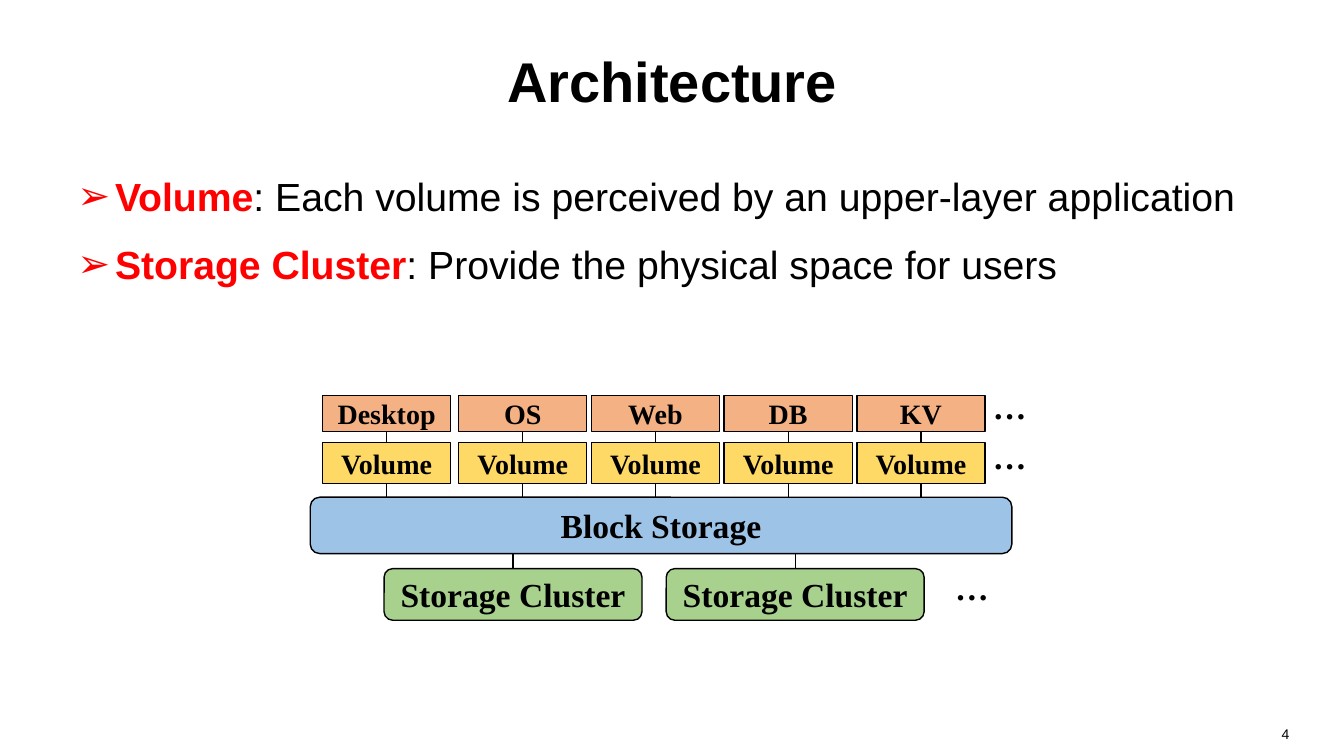
from dataclasses import dataclass

from lxml.etree import SubElement
from pptx import Presentation
from pptx.dml.color import RGBColor as RGB
from pptx.enum.shapes import MSO_CONNECTOR as CONN, MSO_SHAPE as SHAPE
from pptx.enum.text import MSO_ANCHOR as ANCHOR, PP_ALIGN as ALIGN
from pptx.oxml.ns import qn
from pptx.util import Cm, Pt


@dataclass(frozen=True)
class Theme:
    """Colours, fonts and type sizes of the slide."""
    black: RGB = RGB(0, 0, 0)
    red: RGB = RGB(255, 0, 0)
    app: RGB = RGB.from_string("F4B183")
    volume: RGB = RGB.from_string("FFD966")
    block: RGB = RGB.from_string("9DC3E6")
    cluster: RGB = RGB.from_string("A9D18E")
    sans: str = "Arial"
    serif: str = "Times New Roman"
    title: int = 40
    body: int = 28
    large: int = 24
    small: int = 20
    number: int = 10


T = Theme()


def style(r, font, size, bold=False, color=T.black):
    """Format one run."""
    r.font.name, r.font.size, r.font.bold = font, Pt(size), bold
    r.font.color.rgb = color


def add_label(slide, text, x, y, w, h, font, size, bold=False, align=ALIGN.LEFT):
    """Add a one-paragraph text box."""
    tf = slide.shapes.add_textbox(Cm(x), Cm(y), Cm(w), Cm(h)).text_frame
    tf.word_wrap = True
    p = tf.paragraphs[0]
    p.text, p.alignment = text, align
    style(p.runs[0], font, size, bold)


def add_box(slide, kind, text, x, y, w, h, fill, size):
    """Add an outlined box with a centred bold label."""
    sp = slide.shapes.add_shape(kind, Cm(x), Cm(y), Cm(w), Cm(h))
    sp.shadow.inherit = False
    sp.fill.solid()
    sp.fill.fore_color.rgb = fill
    sp.line.color.rgb, sp.line.width = T.black, Pt(1)
    tf = sp.text_frame
    tf.text, tf.vertical_anchor = text, ANCHOR.MIDDLE
    p = tf.paragraphs[0]
    p.alignment = ALIGN.CENTER
    style(p.runs[0], T.serif, size, True)


def add_link(slide, x, top, bottom):
    """Join two layers with a vertical line."""
    line = slide.shapes.add_connector(CONN.STRAIGHT, Cm(x), Cm(top), Cm(x), Cm(bottom))
    line.line.color.rgb, line.line.width = T.black, Pt(1)
    SubElement(line._element.spPr, qn("a:effectLst"))


def add_title(slide, text, x, y, w, h):
    """Place and format the title placeholder."""
    sp = slide.shapes.title
    sp.left, sp.top, sp.width, sp.height = Cm(x), Cm(y), Cm(w), Cm(h)
    tf = sp.text_frame
    tf.text, tf.vertical_anchor = text, ANCHOR.MIDDLE
    p = tf.paragraphs[0]
    p.alignment = ALIGN.CENTER
    style(p.runs[0], T.sans, T.title, True)


def add_definitions(slide, items, x, y, w, h):
    """Add arrow bullets, each a red term followed by its meaning."""
    tf = slide.shapes.add_textbox(Cm(x), Cm(y), Cm(w), Cm(h)).text_frame
    tf.word_wrap = True
    for i, (term, meaning) in enumerate(items):
        p = tf.add_paragraph() if i else tf.paragraphs[0]
        p.space_before = Pt(15)
        for text, bold, color in ((term, True, T.red), (f": {meaning}", False, T.black)):
            r = p.add_run()
            r.text = text
            style(r, T.sans, T.body, bold, color)
        pPr = p._p.get_or_add_pPr()
        pPr.set("marL", str(Cm(0.95)))
        pPr.set("indent", str(-Cm(0.95)))
        SubElement(SubElement(pPr, qn("a:buClr")), qn("a:srgbClr"), val=str(T.red))
        SubElement(pPr, qn("a:buFont"), typeface=T.sans)
        SubElement(pPr, qn("a:buChar"), char="➢")


def add_stack(slide, apps, x, y, w):
    """Draw applications and volumes above block storage and its clusters."""
    col_w, app_h, vol_h, block_h = 3.23, 0.91, 1.04, 1.42
    vol_y, block_y, cluster_y = y + 1.19, y + 2.57, y + 4.37
    for i, app in enumerate(apps):
        col_x = x + 0.31 + (3.43 + 3.345 * (i - 1) if i else 0)
        mid = col_x + col_w / 2
        add_link(slide, mid, y + app_h, vol_y)
        add_link(slide, mid, vol_y + vol_h, block_y)
        add_box(slide, SHAPE.RECTANGLE, app, col_x, y, col_w, app_h, T.app, T.small)
        add_box(slide, SHAPE.RECTANGLE, "Volume", col_x, vol_y, col_w, vol_h,
                T.volume, T.small)
    add_box(slide, SHAPE.ROUNDED_RECTANGLE, "Block Storage", x, block_y, w, block_h,
            T.block, T.large)
    cluster_w = 6.5
    for i in range(2):
        cluster_x = x + 1.86 + 7.11 * i
        add_link(slide, cluster_x + cluster_w / 2, block_y + block_h, cluster_y)
        add_box(slide, SHAPE.ROUNDED_RECTANGLE, "Storage Cluster", cluster_x, cluster_y,
                cluster_w, 1.3, T.cluster, T.large)
    for dx, dy in ((16.95, -0.36), (16.95, 0.91), (16, 4.19)):
        add_label(slide, "…", x + dx, y + dy, 2.49, 1.27, T.serif, T.large, True)


def main():
    """Build the architecture slide."""
    prs = Presentation()
    prs.slide_width, prs.slide_height = Cm(33.87), Cm(19.05)
    slide = prs.slides.add_slide(prs.slide_layouts[5])
    add_title(slide, "Architecture", 1.7, 0.43, 30.48, 3.18)
    add_definitions(slide, [
        ("Volume", "Each volume is perceived by an upper-layer application"),
        ("Storage Cluster", "Provide the physical space for users"),
    ], 1.7, 4.22, 30.48, 3.38)
    add_stack(slide, ["Desktop", "OS", "Web", "DB", "KV"], 7.82, 9.96, 17.68)
    add_label(slide, "4", 24.84, 18.16, 7.9, 0.89, T.sans, T.number, align=ALIGN.RIGHT)
    prs.save("out.pptx")


if __name__ == "__main__":
    main()
